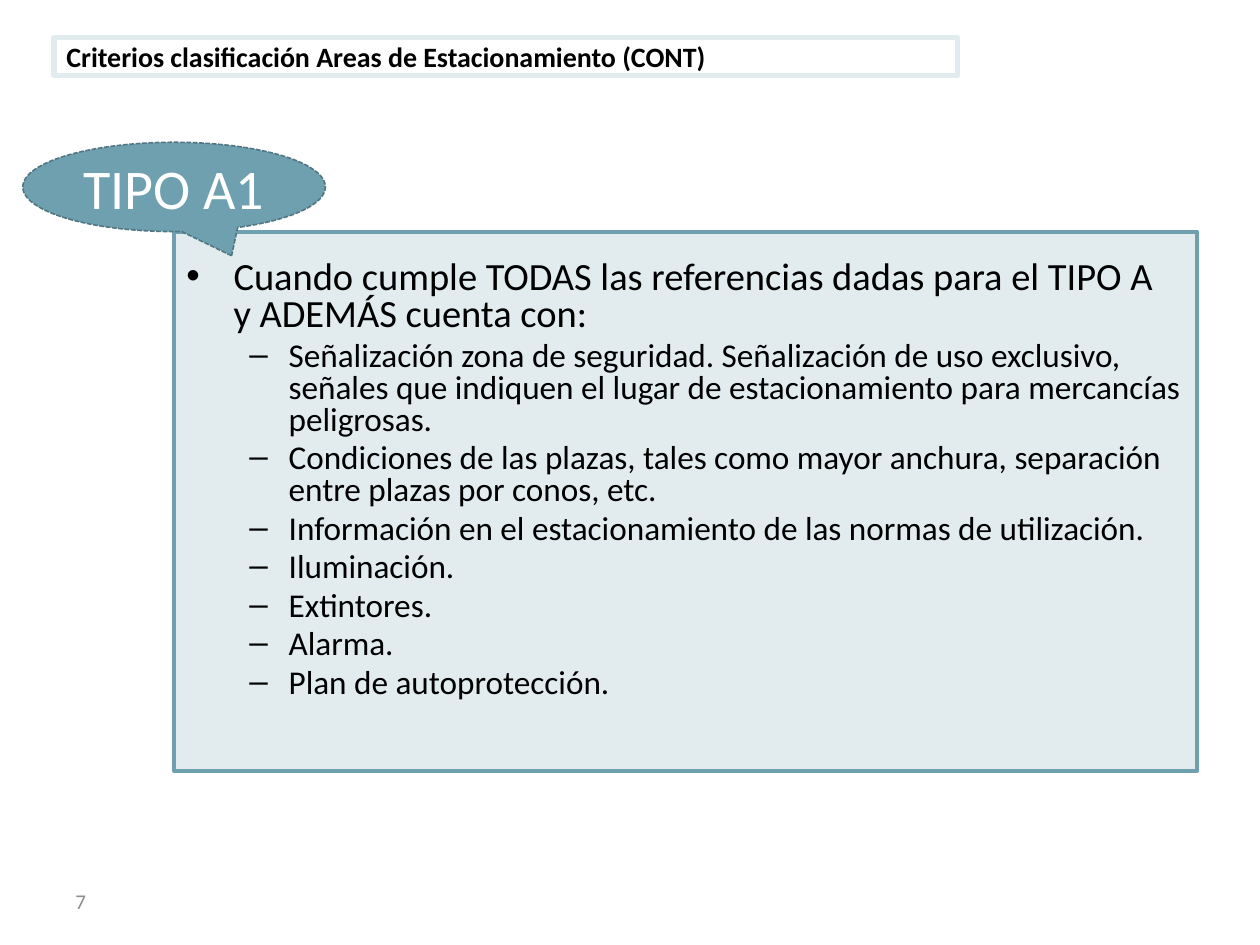
from lxml.etree import SubElement
from pptx import Presentation
from pptx.dml.color import RGBColor
from pptx.enum.dml import MSO_LINE
from pptx.enum.shapes import MSO_SHAPE
from pptx.enum.text import MSO_ANCHOR, PP_ALIGN
from pptx.oxml.ns import qn
from pptx.util import Cm, Pt

COLORS = {"teal": "6EA0B0", "pale": "E2ECEF", "edge": "517682",
          "black": "000000", "white": "FFFFFF", "grey": "8C8C8C"}
FONT = "Calibri"
LEAD = "Cuando cumple TODAS las referencias dadas para el TIPO A  y ADEMÁS cuenta con:"
CRITERIA = [
    "Señalización zona de seguridad. Señalización de uso exclusivo, señales que "
    "indiquen el lugar de estacionamiento para mercancías peligrosas.",
    "Condiciones de las plazas, tales como mayor anchura, separación entre plazas por conos, etc.",
    "Información en el estacionamiento de las normas de utilización.",
    "Iluminación.",
    "Extintores.",
    "Alarma.",
    "Plan de autoprotección.",
]


def rgb(name):
    return RGBColor.from_string(COLORS[name])


def add_run(p, text, size, color, bold=False):
    r = p.add_run()
    r.text = text
    r.font.name, r.font.size, r.font.bold = FONT, Pt(size), bold
    r.font.color.rgb = rgb(color)


def add_box(s, kind, box, line, width, fill=None):
    sp = s.shapes.add_shape(kind, *map(Cm, box))
    sp.shadow.inherit = False
    if fill:
        sp.fill.solid()
        sp.fill.fore_color.rgb = rgb(fill)
    else:
        sp.fill.background()
    sp.line.color.rgb = rgb(line)
    sp.line.width = Pt(width)
    sp.text_frame.word_wrap = True
    return sp


def add_bullet(p, text, size, char, margin, hanging, level=0):
    p.level = level
    p.alignment = PP_ALIGN.LEFT
    p.line_spacing = 0.8
    p.space_before = Pt(size * 0.2 if level else 0)
    pPr = p._p.get_or_add_pPr()
    pPr.set("marL", str(Cm(margin)))
    pPr.set("indent", str(-Cm(hanging)))
    SubElement(pPr, qn("a:buFont"), typeface="Arial")
    SubElement(pPr, qn("a:buChar"), char=char)
    add_run(p, text, size, "black")


def add_title(s, box):
    sp = add_box(s, MSO_SHAPE.RECTANGLE, box, "pale", 3)
    tf = sp.text_frame
    tf.vertical_anchor = MSO_ANCHOR.MIDDLE
    p = tf.paragraphs[0]
    p.alignment = PP_ALIGN.LEFT
    add_run(p, "Criterios clasificación Areas de Estacionamiento (CONT)", 16, "black", True)


def add_criteria(s, box):
    sp = add_box(s, MSO_SHAPE.RECTANGLE, box, "teal", 2.25, "pale")
    tf = sp.text_frame
    tf.vertical_anchor = MSO_ANCHOR.TOP
    tf.margin_top = Cm(0.6)
    add_bullet(tf.paragraphs[0], LEAD, 22, "•", 0.95, 0.95)
    for text in CRITERIA:
        add_bullet(tf.add_paragraph(), text, 19, "–", 2.06, 0.79, 1)


def add_callout(s, box):
    sp = add_box(s, MSO_SHAPE.OVAL_CALLOUT, box, "edge", 0.9, "teal")
    sp.adjustments[0], sp.adjustments[1] = 0.19, 0.77
    sp.line.dash_style = MSO_LINE.SQUARE_DOT
    tf = sp.text_frame
    tf.vertical_anchor = MSO_ANCHOR.MIDDLE
    tf.word_wrap = False
    p = tf.paragraphs[0]
    p.alignment = PP_ALIGN.CENTER
    add_run(p, "TIPO A1", 32, "white")


def add_page_number(s, box):
    tf = s.shapes.add_textbox(*map(Cm, box)).text_frame
    tf.word_wrap = True
    tf.vertical_anchor = MSO_ANCHOR.MIDDLE
    add_run(tf.paragraphs[0], "7", 12, "grey")


def main():
    prs = Presentation()
    prs.slide_width, prs.slide_height = Cm(25.4), Cm(19.05)
    s = prs.slides.add_slide(prs.slide_layouts[6])
    add_page_number(s, (1.27, 17.65, 5.92, 1.02))
    add_criteria(s, (3.51, 4.67, 20.62, 10.87))
    add_title(s, (1.09, 0.76, 18.21, 0.76))
    add_callout(s, (0.46, 2.87, 6.1, 1.8))
    prs.save("out.pptx")


if __name__ == "__main__":
    main()
